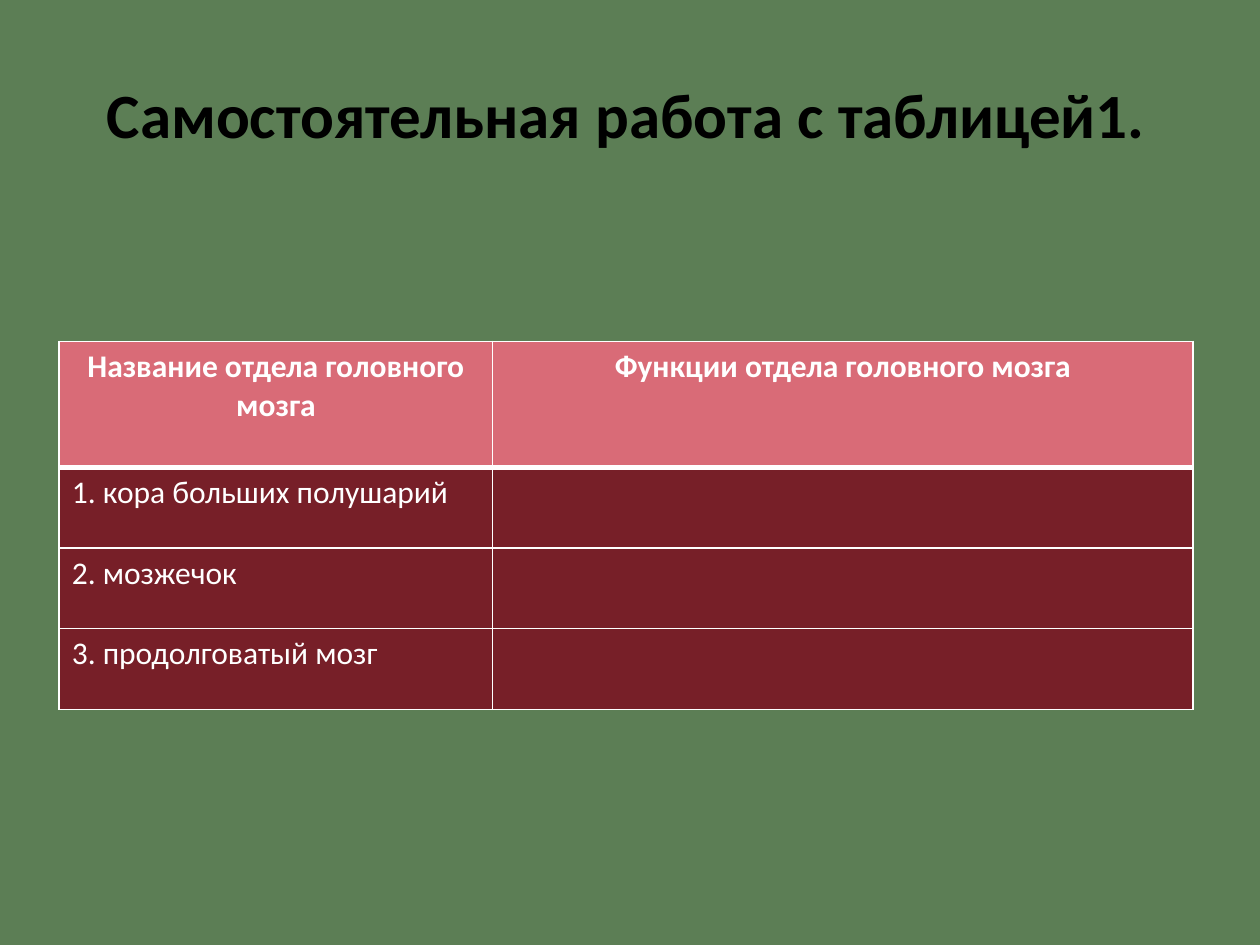
from lxml import etree
from pptx import Presentation
from pptx.dml.color import RGBColor
from pptx.enum.text import MSO_ANCHOR, PP_ALIGN
from pptx.oxml.ns import qn
from pptx.util import Inches, Pt

TOP = MSO_ANCHOR.TOP
CENTER = PP_ALIGN.CENTER
LEFT = PP_ALIGN.LEFT

FONT = "Calibri"
GREEN = "5C7E55"
BLACK = "000000"
WHITE = "FFFFFF"
PINK = "D96B77"
MAROON = "771F28"

HEADINGS = ["Название отдела головного мозга", "Функции отдела головного мозга"]
BRAIN_PARTS = ["кора больших полушарий", "мозжечок", "продолговатый мозг"]
COLUMN_WIDTHS = [3.44, 5.56]
HEADING_HEIGHT = 1
PART_HEIGHT = 0.64


def color(hex_value):
    return RGBColor.from_string(hex_value)


def write(paragraph, text, size, hex_value, bold, align):
    paragraph.text = text
    paragraph.alignment = align
    paragraph.font.name = FONT
    paragraph.font.size = Pt(size)
    paragraph.font.bold = bold
    paragraph.font.color.rgb = color(hex_value)


def add_borders(cell, widths):
    properties = cell._tc.get_or_add_tcPr()
    for side, width in widths.items():
        line = etree.SubElement(properties, qn(f"a:ln{side}"), w=str(Pt(width)))
        fill = etree.SubElement(line, qn("a:solidFill"))
        etree.SubElement(fill, qn("a:srgbClr"), val=WHITE)


def add_title(slide, left, top, width, height):
    title = slide.shapes.add_textbox(left, top, width, height).text_frame
    title.word_wrap = True
    title.vertical_anchor = TOP
    write(title.paragraphs[0], "Самостоятельная работа с таблицей1.", 36, BLACK, True, CENTER)


def add_brain_table(slide, left, top, width, height):
    rows = [HEADINGS] + [[f"{number}. {part}", ""] for number, part in enumerate(BRAIN_PARTS, 1)]
    table = slide.shapes.add_table(len(rows), len(HEADINGS), left, top, width, height).table
    for column, column_width in zip(table.columns, COLUMN_WIDTHS):
        column.width = Inches(column_width)
    for row_index, texts in enumerate(rows):
        heading = row_index == 0
        table.rows[row_index].height = Inches(HEADING_HEIGHT if heading else PART_HEIGHT)
        borders = {"L": 1, "R": 1, "T": 3 if row_index == 1 else 1, "B": 3 if heading else 1}
        for column_index, text in enumerate(texts):
            cell = table.cell(row_index, column_index)
            add_borders(cell, borders)
            cell.fill.solid()
            cell.fill.fore_color.rgb = color(PINK if heading else MAROON)
            write(cell.text_frame.paragraphs[0], text, 18, WHITE, heading, CENTER if heading else LEFT)


def main():
    presentation = Presentation()
    presentation.slide_width = Inches(10)
    presentation.slide_height = Inches(7.5)
    slide = presentation.slides.add_slide(presentation.slide_layouts[6])
    slide.background.fill.solid()
    slide.background.fill.fore_color.rgb = color(GREEN)
    add_title(slide, Inches(0.47), Inches(0.55), Inches(9), Inches(1.25))
    add_brain_table(slide, Inches(0.47), Inches(2.71), Inches(9), Inches(2.92))
    presentation.save("out.pptx")


if __name__ == "__main__":
    main()
